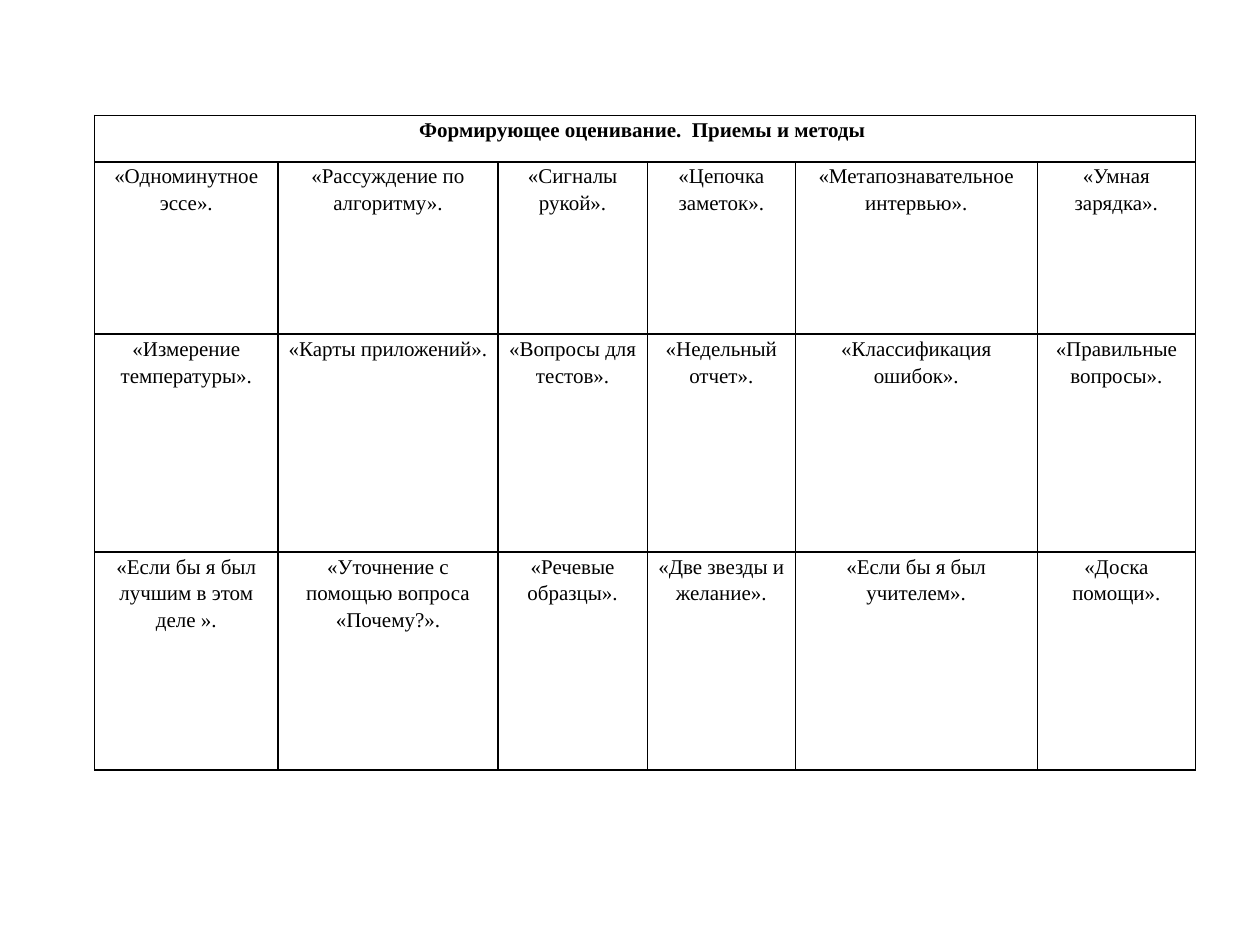
from lxml import etree
from pptx import Presentation
from pptx.dml.color import RGBColor
from pptx.enum import text
from pptx.oxml import ns
from pptx.util import Pt

BLACK = RGBColor(0, 0, 0)
FONT = "Times New Roman"
TITLE = "Формирующее оценивание.\N{NO-BREAK SPACE} Приемы и методы "
METHODS = [
    ["«Одноминутное эссе».", "«Рассуждение по алгоритму».", "«Сигналы рукой».",
     "«Цепочка заметок».", "«Метапознавательное\nинтервью».", "«Умная зарядка»."],
    ["«Измерение температуры».", "«Карты приложений».", "«Вопросы для тестов».",
     "«Недельный отчет».", "«Классификация ошибок».", "«Правильные вопросы»."],
    ["«Если бы я был лучшим в этом деле ».", "«Уточнение с помощью вопроса «Почему?».",
     "«Речевые образцы».", "«Две звезды и желание».", "«Если бы я был учителем».",
     "«Доска помощи»."],
]
COLS = [105, 125.5, 85.5, 84.5, 138.3, 90.5]
ROWS = [26.5, 98.5, 124.5, 124.5]


def write(cell, content, bold=False):
    tf = cell.text_frame
    tf.text = content
    for p in tf.paragraphs:
        p.alignment = text.PP_ALIGN.CENTER
        p.line_spacing = 1.15
        for r in p.runs:
            r.font.name = FONT
            r.font.size = Pt(12)
            r.font.bold = bold
            r.font.color.rgb = BLACK


def add_borders(cell, color, width):
    tcPr = cell._tc.get_or_add_tcPr()
    for side in ("a:lnL", "a:lnR", "a:lnT", "a:lnB"):
        ln = etree.SubElement(tcPr, ns.qn(side), w=str(Pt(width)))
        fill = etree.SubElement(ln, ns.qn("a:solidFill"))
        etree.SubElement(fill, ns.qn("a:srgbClr"), val=str(color))


prs = Presentation()
prs.slide_width, prs.slide_height = Pt(720), Pt(540)
s = prs.slides.add_slide(prs.slide_layouts[6])

table = s.shapes.add_table(len(ROWS), len(COLS), Pt(54), Pt(66),
                           Pt(sum(COLS)), Pt(sum(ROWS))).table
table.first_row = table.horz_banding = False
for col, width in zip(table.columns, COLS):
    col.width = Pt(width)
for row, height in zip(table.rows, ROWS):
    row.height = Pt(height)

for cell in table.iter_cells():
    cell.margin_left = cell.margin_right = Pt(5)
    cell.margin_top = cell.margin_bottom = 0
    add_borders(cell, BLACK, 1)
    cell.fill.background()

title = table.cell(0, 0)
title.merge(table.cell(0, len(COLS) - 1))
write(title, TITLE, bold=True)
for i, methods in enumerate(METHODS, start=1):
    for j, method in enumerate(methods):
        write(table.cell(i, j), method)

prs.save("out.pptx")
